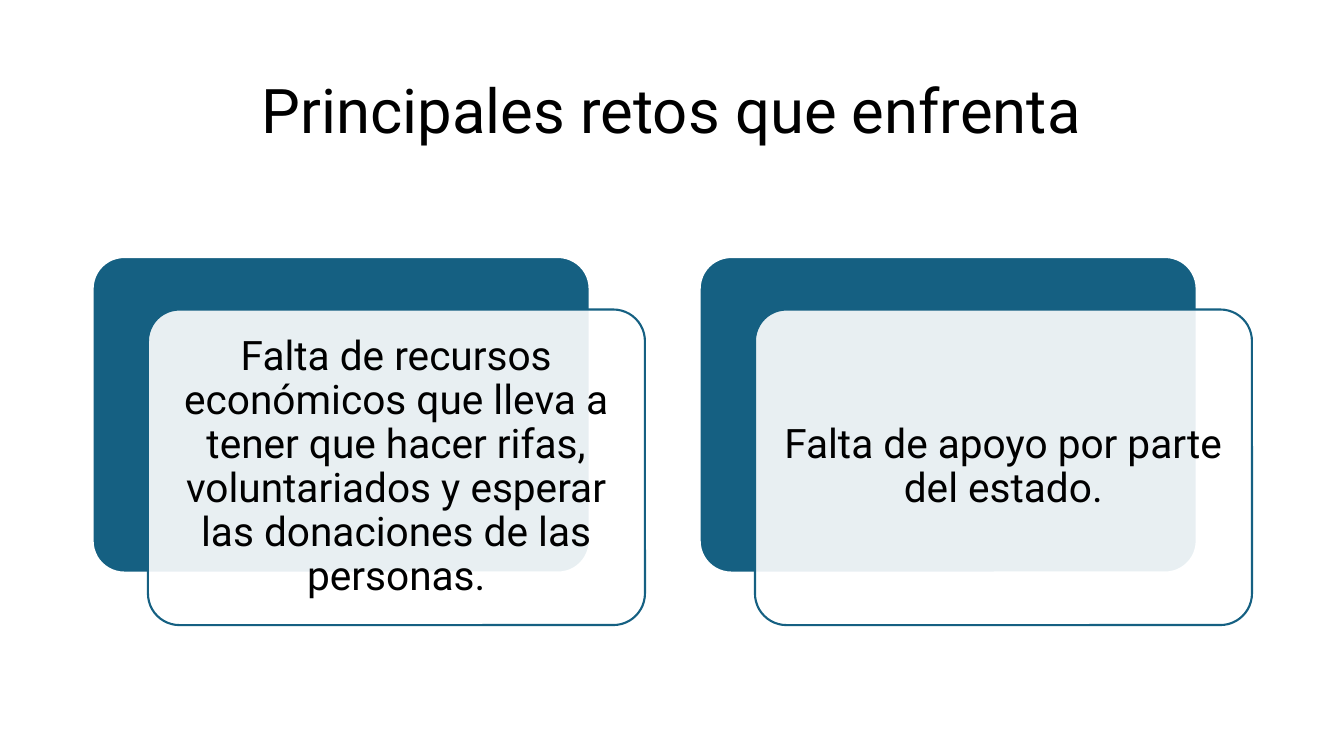
from pptx import Presentation
from pptx.dml.color import RGBColor
from pptx.enum.shapes import MSO_SHAPE as Preset
from pptx.enum.text import MSO_ANCHOR as Anchor, PP_ALIGN as Align
from pptx.oxml.ns import qn
from pptx.util import Pt
from lxml.etree import SubElement

theme = {
    "font": "Roboto",
    "ink": RGBColor(0x00, 0x00, 0x00),
    "blue": RGBColor(0x15, 0x60, 0x82),
    "white": RGBColor(0xFF, 0xFF, 0xFF),
    "title_size": Pt(44),
    "card_size": Pt(29),
}

prs = Presentation()
prs.slide_width, prs.slide_height = Pt(960), Pt(540)
slide = prs.slides.add_slide(prs.slide_layouts[6])


def add_words(words, size, left, top, width, height, inset_x, inset_y):
    frame = slide.shapes.add_textbox(Pt(left), Pt(top), Pt(width), Pt(height)).text_frame
    settings = {
        "word_wrap": True, "vertical_anchor": Anchor.MIDDLE,
        "margin_left": Pt(inset_x), "margin_right": Pt(inset_x),
        "margin_top": Pt(inset_y), "margin_bottom": Pt(inset_y),
    }
    for name, value in settings.items():
        setattr(frame, name, value)
    paragraph = frame.paragraphs[0]
    paragraph.alignment = Align.CENTER
    paragraph.line_spacing = 0.9
    run = paragraph.add_run()
    run.text = words
    for name, value in {"name": theme["font"], "size": size}.items():
        setattr(run.font, name, value)
    run.font.color.rgb = theme["ink"]


def add_card(left, top, fill, line):
    card = slide.shapes.add_shape(
        Preset.ROUNDED_RECTANGLE, Pt(left), Pt(top), Pt(card_width), Pt(card_height))
    card.adjustments[0] = 0.1
    card.shadow.inherit = False
    card.fill.solid()
    card.fill.fore_color.rgb = fill
    card.line.color.rgb = line
    card.line.width = Pt(1.5)
    return card


# Title
add_words("Principales retos que enfrenta", theme["title_size"],
          66, 28.8, 828, 104.4, 7.2, 3.6)

# Challenges: a blue card behind a translucent white one
challenges = [
    "Falta de recursos económicos que lleva a tener que hacer rifas, "
    "voluntariados y esperar las donaciones de las personas.",
    "Falta de apoyo por parte del estado.",
]
card_width, card_height = 355, 225.4
first_left, card_top, pitch = 66.2, 183.6, 433.6
shift_x, shift_y = 39.5, 37.5
corner_inset = 6.6

for index, challenge in enumerate(challenges):
    back_left = first_left + index * pitch
    add_card(back_left, card_top, theme["blue"], theme["white"])

    front_left, front_top = back_left + shift_x, card_top + shift_y
    front = add_card(front_left, front_top, theme["white"], theme["blue"])
    front_color = front.fill._xPr.find(qn("a:solidFill"))[0]
    SubElement(front_color, qn("a:alpha"), val="90000")

    add_words(challenge, theme["card_size"],
              front_left + corner_inset, front_top + corner_inset,
              card_width - 2 * corner_inset, card_height - 2 * corner_inset, 8.7, 8.7)

prs.save("out.pptx")
